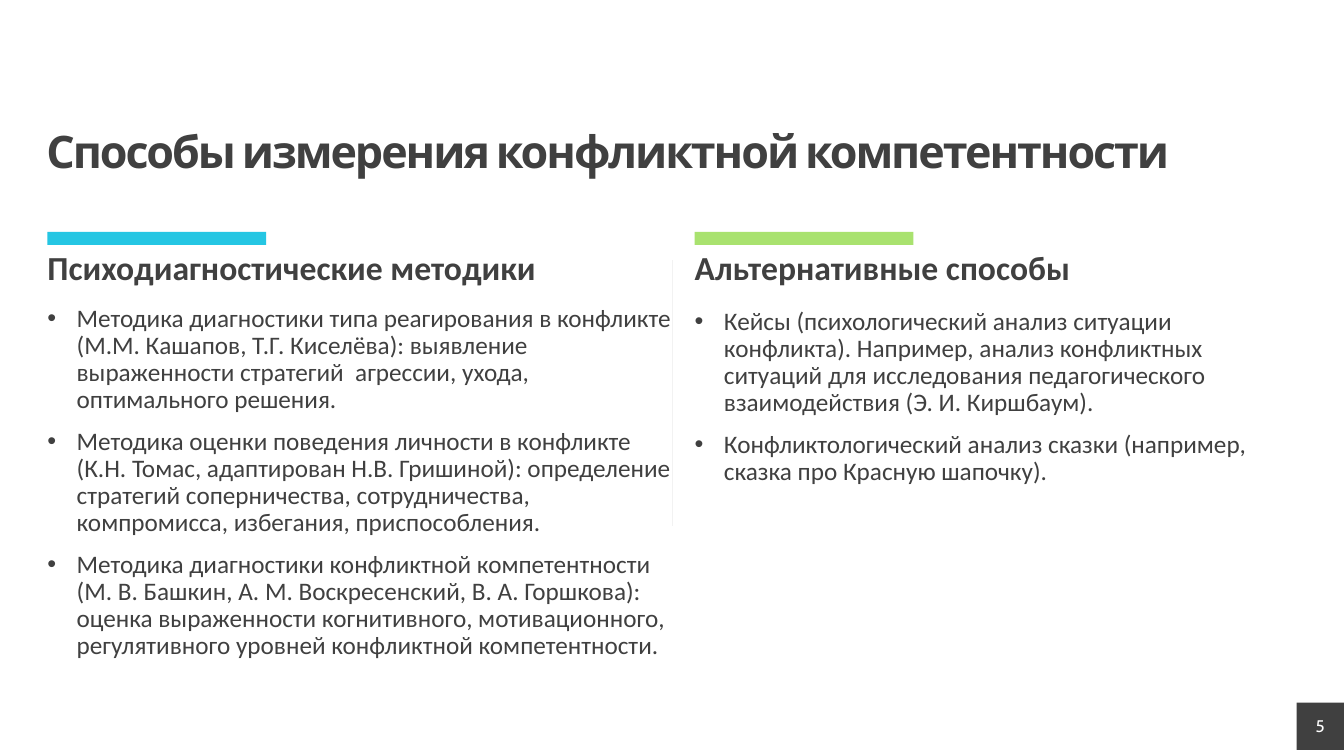
"""Build a slide comparing two groups of ways to measure conflict competence."""
from dataclasses import dataclass

from lxml import etree
from pptx import Presentation
from pptx.dml.color import RGBColor
from pptx.enum.shapes import MSO_CONNECTOR, MSO_SHAPE
from pptx.enum.text import MSO_ANCHOR, MSO_AUTO_SIZE, PP_ALIGN
from pptx.oxml.ns import qn
from pptx.shapes.autoshape import Shape
from pptx.slide import Slide
from pptx.text.text import TextFrame, _Paragraph
from pptx.util import Emu, Pt

RECTANGLE = MSO_SHAPE.RECTANGLE
STRAIGHT = MSO_CONNECTOR.STRAIGHT
TOP, MIDDLE = MSO_ANCHOR.TOP, MSO_ANCHOR.MIDDLE
NO_AUTOFIT = MSO_AUTO_SIZE.NONE
LEFT, CENTER = PP_ALIGN.LEFT, PP_ALIGN.CENTER

DARK = RGBColor(0x40, 0x40, 0x40)
WHITE = RGBColor(0xFF, 0xFF, 0xFF)
PALE = RGBColor(0xF2, 0xF2, 0xF2)
CYAN = RGBColor(0x25, 0xC6, 0xE3)
GREEN = RGBColor(0xA9, 0xE2, 0x6F)

EMU_PER_PX = 9144
DISPLAY_FONT, BODY_FONT = "Cabin", "Calibri"
BULLET_INDENT = 29
ACCENT_TOP, HEADING_TOP = 230, 249


@dataclass(frozen=True)
class Box:
    left: int
    top: int
    width: int
    height: int

    def emu(self) -> tuple[Emu, ...]:
        return tuple(px(n) for n in (self.left, self.top, self.width, self.height))


@dataclass(frozen=True)
class Column:
    accent: RGBColor
    heading: str
    body: Box
    methods: tuple[str, ...]


COLUMNS = (
    Column(CYAN, "Психодиагностические методики", Box(47, 303, 621, 415), (
        "Методика диагностики типа реагирования в конфликте (М.М. Кашапов, Т.Г. Киселёва): "
        "выявление выраженности стратегий  агрессии, ухода, оптимального решения.",
        "Методика оценки поведения личности в конфликте (К.Н. Томас, адаптирован Н.В. Гришиной): "
        "определение стратегий соперничества, сотрудничества, компромисса, избегания, "
        "приспособления.",
        "Методика диагностики конфликтной компетентности (М. В. Башкин, А. М. Воскресенский, "
        "В. А. Горшкова): оценка выраженности когнитивного, мотивационного, регулятивного "
        "уровней конфликтной компетентности.",
    )),
    Column(GREEN, "Альтернативные способы", Box(689, 306, 598, 240), (
        "Кейсы (психологический анализ ситуации конфликта). Например, анализ конфликтных "
        "ситуаций для исследования педагогического взаимодействия (Э. И. Киршбаум).",
        "Конфликтологический анализ сказки (например, сказка про Красную шапочку).",
    )),
)


def px(length: int) -> Emu:
    return Emu(length * EMU_PER_PX)


def prepare_frame(frame: TextFrame, anchor: MSO_ANCHOR) -> None:
    frame.margin_left = frame.margin_top = frame.margin_right = frame.margin_bottom = 0
    frame.word_wrap = True
    frame.auto_size = NO_AUTOFIT
    frame.vertical_anchor = anchor


def style(paragraph: _Paragraph, font_name: str, size: int, color: RGBColor,
          bold: bool = False, align: PP_ALIGN = LEFT) -> None:
    paragraph.alignment = align
    font = paragraph.font
    font.name, font.size, font.bold = font_name, Pt(size), bold
    font.color.rgb = color


def add_bullet(paragraph: _Paragraph) -> None:
    properties = paragraph._p.get_or_add_pPr()
    properties.set("marL", str(px(BULLET_INDENT)))
    properties.set("indent", str(px(-BULLET_INDENT)))
    etree.SubElement(properties, qn("a:buFont"), typeface="Arial")
    etree.SubElement(properties, qn("a:buChar"), char="•")


def add_text(slide: Slide, box: Box, lines: tuple[str, ...], size: int,
             bold: bool = False, bulleted: bool = False) -> None:
    frame = slide.shapes.add_textbox(*box.emu()).text_frame
    prepare_frame(frame, TOP)
    for index, line in enumerate(lines):
        paragraph = frame.add_paragraph() if index else frame.paragraphs[0]
        paragraph.text = line
        paragraph.line_spacing = 0.9
        if index:
            paragraph.space_before = Pt(10)
        if bulleted:
            add_bullet(paragraph)
        style(paragraph, BODY_FONT, size, DARK, bold)


def add_block(slide: Slide, box: Box, color: RGBColor) -> Shape:
    block = slide.shapes.add_shape(RECTANGLE, *box.emu())
    block.shadow.inherit = False
    block.fill.solid()
    block.fill.fore_color.rgb = color
    block.line.fill.background()
    return block


def add_title(slide: Slide, text: str) -> None:
    title = slide.shapes.title
    title.left, title.top, title.width, title.height = Box(46, 129, 1240, 47).emu()
    prepare_frame(title.text_frame, MIDDLE)
    paragraph = title.text_frame.paragraphs[0]
    run = paragraph.add_run()
    run.text = text
    run._r.get_or_add_rPr().set("spc", "-150")
    paragraph.line_spacing = 0.9
    style(paragraph, DISPLAY_FONT, 32, DARK, bold=True)


def add_column(slide: Slide, column: Column) -> None:
    left = column.body.left
    add_block(slide, Box(left, ACCENT_TOP, 217, 13), column.accent)
    add_text(slide, Box(left, HEADING_TOP, 598, 39), (column.heading,), 24, bold=True)
    add_text(slide, column.body, column.methods, 18, bulleted=True)


def add_divider(slide: Slide) -> None:
    divider = slide.shapes.add_connector(STRAIGHT, px(667), px(258), px(667), px(522))
    divider.line.color.rgb = PALE
    divider.line.width = Pt(0.5)
    etree.SubElement(divider._element.spPr, qn("a:effectLst"))


def add_page_number(slide: Slide, number: str) -> None:
    frame = add_block(slide, Box(1286, 697, 47, 47), DARK).text_frame
    prepare_frame(frame, MIDDLE)
    frame.text = number
    style(frame.paragraphs[0], DISPLAY_FONT, 12, WHITE, align=CENTER)


def main() -> None:
    deck = Presentation()
    deck.slide_width, deck.slide_height = px(1333), px(750)
    slide = deck.slides.add_slide(deck.slide_layouts[5])
    add_title(slide, "Способы измерения конфликтной компетентности")
    for column in COLUMNS:
        add_column(slide, column)
    add_divider(slide)
    add_page_number(slide, "5")
    deck.save("out.pptx")


if __name__ == "__main__":
    main()
